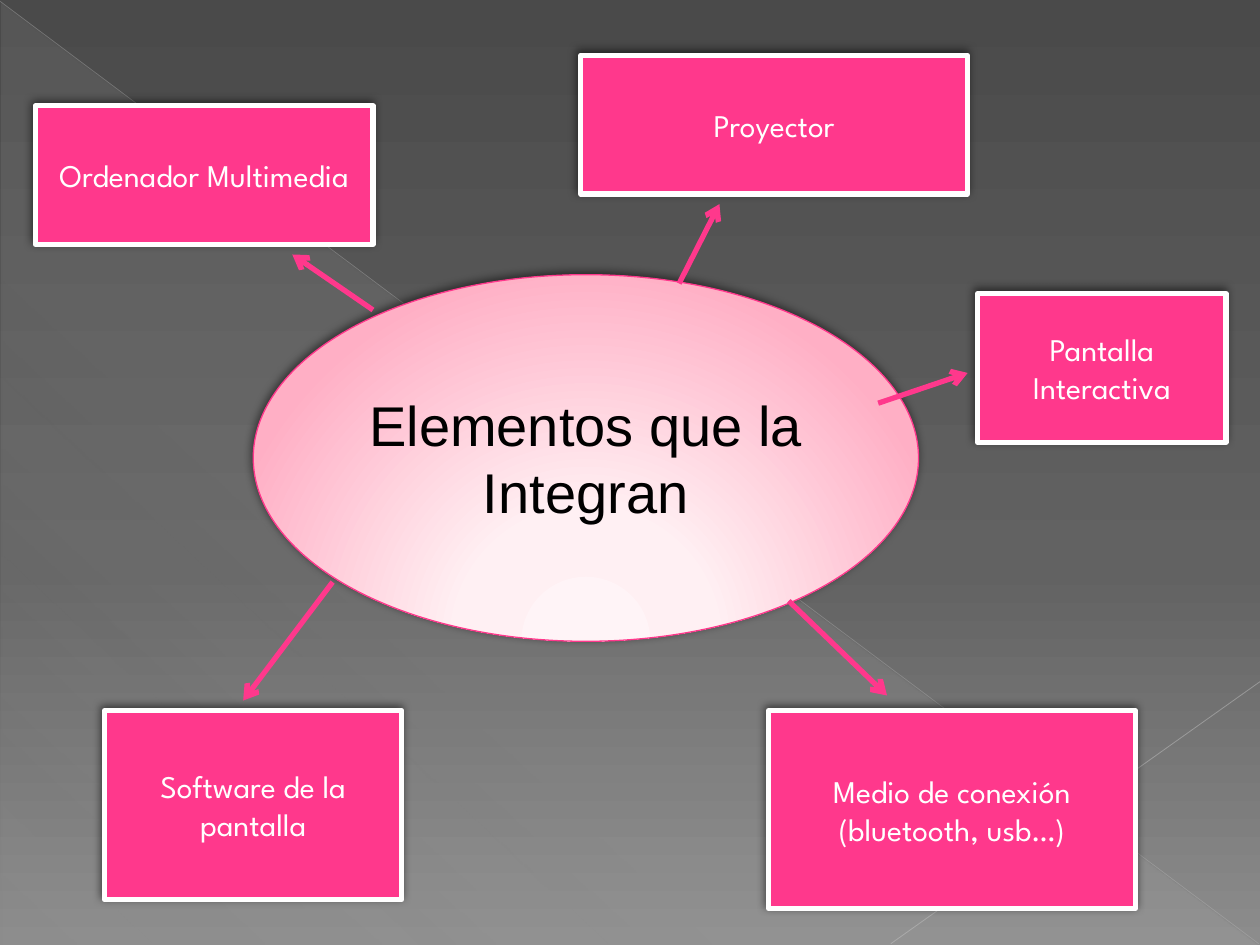
import pptx
import pptx.dml.color
import pptx.enum.shapes
import pptx.enum.text
import pptx.oxml
import pptx.oxml.ns
import pptx.util
from pptx.util import Inches

COLORS = {
    "pink": "FF388C", "white": "FFFFFF", "black": "000000",
    "rose": "FFAFC5", "blush": "FFF0F3", "pale": "FFF4F7",
    "dark": "4A4A4A", "middle": "626262", "light": "8C8C8C",
    "veil": "D2D2D2", "diagonal": "BFBFBF", "corner": "C6C6C6",
}
SHAPES = pptx.enum.shapes.MSO_SHAPE

# Label, box (left, top, width, height), arrow start, arrow end
ELEMENTS = [
    ("Proyector", (4.61, 0.44, 3.07, 1.1), (5.39, 2.25), (5.71, 1.62)),
    ("Ordenador Multimedia", (0.28, 0.84, 2.68, 1.1), (2.96, 2.46), (2.32, 2.02)),
    ("Medio de conexión (bluetooth, usb…)", (6.1, 5.64, 2.91, 1.57), (6.26, 4.77), (7.04, 5.52)),
    ("Software de la pantalla", (0.83, 5.64, 2.36, 1.5), (2.64, 4.62), (1.93, 5.56)),
    ("Pantalla Interactiva", (7.76, 2.33, 1.97, 1.18), (6.97, 3.2), (7.68, 2.96)),
]


def rgb(name):
    return pptx.dml.color.RGBColor.from_string(COLORS[name])


def make_xml(tag, content="", attributes=""):
    namespace = pptx.oxml.ns.nsdecls("a")
    return pptx.oxml.parse_xml(f"<a:{tag} {namespace} {attributes}>{content}</a:{tag}>")


def set_gradient(fill, parent, stops, direction):
    """Fill with stops of (position, color, opacity), all in percent."""
    fill.solid()
    stop_xml = "".join(
        f'<a:gs pos="{position * 1000}"><a:srgbClr val="{COLORS[color]}">'
        f'<a:alpha val="{opacity * 1000}"/></a:srgbClr></a:gs>'
        for position, color, opacity in stops)
    gradient = make_xml("gradFill", f"<a:gsLst>{stop_xml}</a:gsLst>{direction}", 'rotWithShape="1"')
    solid = parent.find(pptx.oxml.ns.qn("a:solidFill"))
    parent.replace(solid, gradient)


def linear(angle):
    return f'<a:lin ang="{angle * 60000}" scaled="0"/>'


def add_panel(slide, kind, box, line=None, line_width=0):
    shape = slide.shapes.add_shape(kind, *map(Inches, box))
    shape.shadow.inherit = False
    if line:
        shape.line.color.rgb = rgb(line)
        shape.line.width = pptx.util.Pt(line_width)
    else:
        shape.line.fill.background()
    return shape


def add_shadow(shape):
    effects = shape.element.spPr.find(pptx.oxml.ns.qn("a:effectLst"))
    effects.append(make_xml(
        "outerShdw",
        f'<a:srgbClr val="{COLORS["black"]}"><a:alpha val="50000"/></a:srgbClr>',
        f'blurRad="{pptx.util.Pt(5)}" dist="{pptx.util.Pt(2)}" dir="{245 * 60000}" rotWithShape="0"'))


def write_text(shape, text, *, size, font, color):
    frame = shape.text_frame
    frame.word_wrap = True
    frame.vertical_anchor = pptx.enum.text.MSO_ANCHOR.MIDDLE
    paragraph = frame.paragraphs[0]
    paragraph.alignment = pptx.enum.text.PP_ALIGN.CENTER
    run = paragraph.add_run()
    run.text = text
    run.font.size = pptx.util.Pt(size)
    run.font.name = font
    run.font.color.rgb = rgb(color)


def add_line(slide, start, end, color, width, opacity=100, arrow=False):
    connector = slide.shapes.add_connector(
        pptx.enum.shapes.MSO_CONNECTOR.STRAIGHT, *map(Inches, start + end))
    connector.line.color.rgb = rgb(color)
    connector.line.width = pptx.util.Pt(width)
    properties = connector.element.spPr
    if opacity < 100:
        color_element = properties.find(".//" + pptx.oxml.ns.qn("a:srgbClr"))
        color_element.append(make_xml("alpha", attributes=f'val="{opacity * 1000}"'))
    if arrow:
        connector.line._get_or_add_ln().append(make_xml("tailEnd", attributes='type="arrow"'))
    properties.append(make_xml("effectLst"))


def add_backdrop(slide, width, height):
    background_fill = slide.background.fill
    background_fill.solid()
    parent = slide.element.find(".//" + pptx.oxml.ns.qn("p:bgPr"))
    set_gradient(background_fill, parent,
                 [(0, "dark", 100), (60, "middle", 100), (100, "light", 100)], linear(90))

    # Translucent triangle and thin diagonals
    triangle = add_panel(slide, SHAPES.RIGHT_TRIANGLE, (0.01, 0.02, width - 0.02, height - 0.02))
    set_gradient(triangle.fill, triangle.element.spPr,
                 [(0, "veil", 10), (70, "veil", 8), (100, "veil", 1)], linear(133))
    add_line(slide, (0, 0.01), (width - 0.01, height - 0.01), "diagonal", 0.39, opacity=35)
    add_line(slide, (width, 5.41), (7.07, height - 0.01), "corner", 0.47, opacity=45)


def add_center(slide, box):
    ellipse = add_panel(slide, SHAPES.OVAL, box, "pink", 0.75)
    glow = '<a:path path="circle"><a:fillToRect l="50000" t="155000" r="50000" b="-55000"/></a:path>'
    set_gradient(ellipse.fill, ellipse.element.spPr,
                 [(0, "pale", 100), (34, "blush", 100), (100, "rose", 100)], glow)
    add_shadow(ellipse)
    write_text(ellipse, "Elementos que la Integran", size=32, font="Arial", color="black")


def add_element(slide, label, box, start, end):
    add_line(slide, start, end, "pink", 3, arrow=True)
    rectangle = add_panel(slide, SHAPES.RECTANGLE, box, "white", 3)
    rectangle.fill.solid()
    rectangle.fill.fore_color.rgb = rgb("pink")
    add_shadow(rectangle)
    write_text(rectangle, label, size=18, font="League Spartan", color="white")


def main():
    presentation = pptx.Presentation()
    presentation.slide_width = Inches(10)
    presentation.slide_height = Inches(7.5)
    slide = presentation.slides.add_slide(presentation.slide_layouts[6])
    add_backdrop(slide, 10, 7.5)
    add_center(slide, (2.01, 2.18, 5.28, 2.91))
    for element in ELEMENTS:
        add_element(slide, *element)
    presentation.save("out.pptx")


if __name__ == "__main__":
    main()
